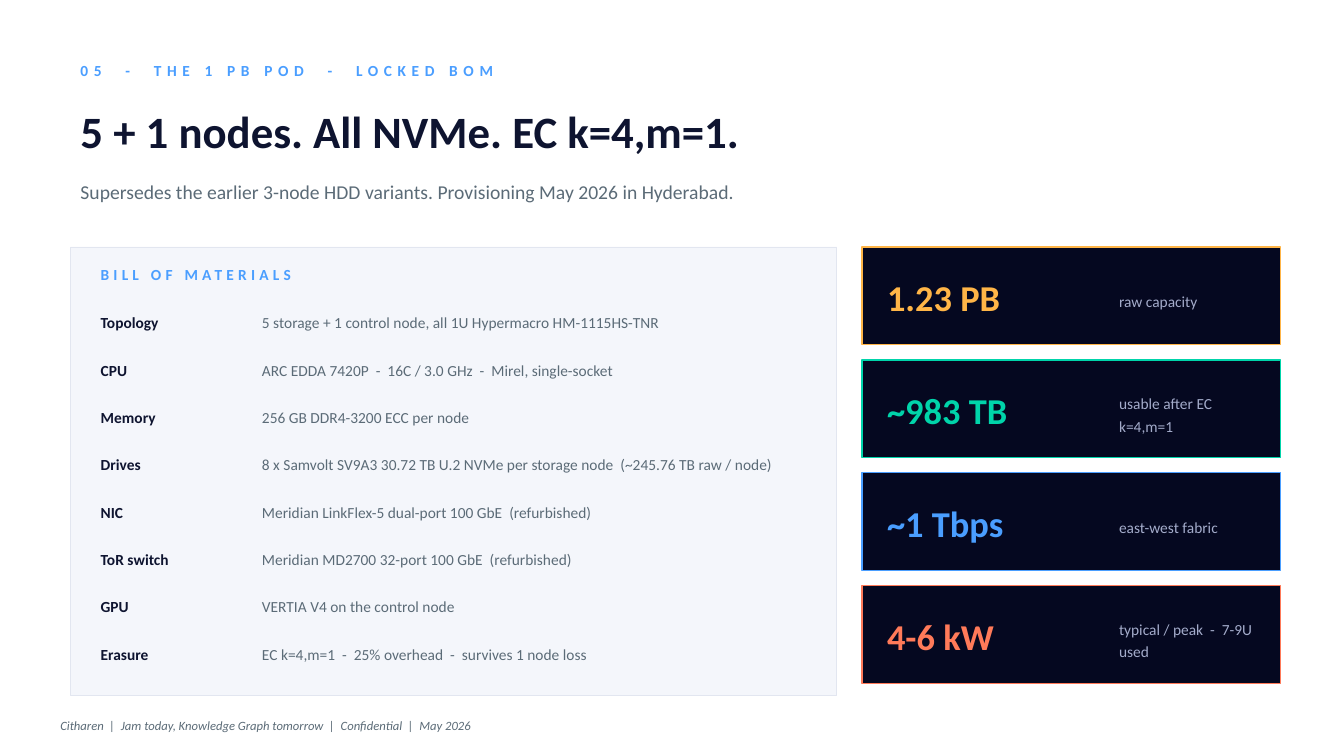
from pptx import Presentation
from pptx.dml.color import RGBColor
from pptx.enum.shapes import MSO_SHAPE
from pptx.enum.text import MSO_ANCHOR
from pptx.util import Emu, Pt

EMU_PER_PX = 9144
NAVY = "0E1430"
SLATE = "5B6B77"
BLUE = "4A9EFF"
AMBER = "FFB547"
GREEN = "00D4AA"
CORAL = "FF7A59"
MIST = "A4ACCB"
MIDNIGHT = "050820"
PANEL = "F4F6FB"
PANEL_EDGE = "E2E6F0"

MATERIALS = [
    ("Topology", "5 storage + 1 control node, all 1U Hypermacro HM-1115HS-TNR"),
    ("CPU", "ARC EDDA 7420P  -  16C / 3.0 GHz  -  Mirel, single-socket"),
    ("Memory", "256 GB DDR4-3200 ECC per node"),
    ("Drives", "8 x Samvolt SV9A3 30.72 TB U.2 NVMe per storage node  (~245.76 TB raw / node)"),
    ("NIC", "Meridian LinkFlex-5 dual-port 100 GbE  (refurbished)"),
    ("ToR switch", "Meridian MD2700 32-port 100 GbE  (refurbished)"),
    ("GPU", "VERTIA V4 on the control node"),
    ("Erasure", "EC k=4,m=1  -  25% overhead  -  survives 1 node loss"),
]
METRICS = [
    ("1.23 PB", "raw capacity", AMBER),
    ("~983 TB", "usable after EC k=4,m=1", GREEN),
    ("~1 Tbps", "east-west fabric", BLUE),
    ("4-6 kW", "typical / peak  -  7-9U used", CORAL),
]


def px(length):
    return Emu(length * EMU_PER_PX)


def color(value):
    return RGBColor.from_string(value)


class Page:
    font = "Calibri"

    def __init__(self, deck):
        self.slide = deck.slides.add_slide(deck.slide_layouts[6])

    def panel(self, left, top, width, height, fill, edge, weight):
        panel = self.slide.shapes.add_shape(
            MSO_SHAPE.RECTANGLE, px(left), px(top), px(width), px(height))
        panel.shadow.inherit = False
        panel.fill.solid()
        panel.fill.fore_color.rgb = color(fill)
        panel.line.color.rgb = color(edge)
        panel.line.width = Pt(weight)

    def text(self, left, top, width, height, words, size, ink,
             bold=False, italic=False, tracking=0, leading=None):
        box = self.slide.shapes.add_textbox(px(left), px(top), px(width), px(height))
        frame = box.text_frame
        frame.word_wrap = True
        frame.vertical_anchor = MSO_ANCHOR.MIDDLE
        para = frame.paragraphs[0]
        if leading:
            para.line_spacing = Pt(leading)
        span = para.add_run()
        span.text = words
        span.font.name = self.font
        span.font.size = Pt(size)
        span.font.bold = bold
        span.font.italic = italic
        span.font.color.rgb = color(ink)
        if tracking:
            span.font._element.set("spc", str(tracking * 100))

    def material(self, top, label, detail):
        self.text(90, top, 155, 40, label, 11, NAVY, bold=True)
        self.text(250, top, 570, 40, detail, 11, SLATE)

    def metric(self, top, figure, caption, accent):
        self.panel(855, top, 415, 97, MIDNIGHT, accent, 1)
        self.text(870, top + 7, 230, 85, figure, 26, accent, bold=True)
        self.text(1100, top + 25, 165, 55, caption, 11, MIST, leading=16)


def main():
    deck = Presentation()
    deck.slide_width = px(1333)
    deck.slide_height = px(750)
    page = Page(deck)

    page.text(70, 55, 800, 30, "05  -  THE 1 PB POD  -  LOCKED BOM", 11, BLUE,
              bold=True, tracking=4)
    page.text(70, 95, 1200, 70, "5 + 1 nodes. All NVMe. EC k=4,m=1.", 32, NAVY, bold=True)
    page.text(70, 170, 1200, 40,
              "Supersedes the earlier 3-node HDD variants. Provisioning May 2026 in Hyderabad.",
              14, SLATE)

    page.panel(70, 245, 760, 445, PANEL, PANEL_EDGE, 0.5)
    page.text(90, 255, 700, 35, "BILL OF MATERIALS", 11, BLUE, bold=True, tracking=3)
    for row, (label, detail) in enumerate(MATERIALS):
        page.material(300 + 47 * row, label, detail)

    for row, (figure, caption, accent) in enumerate(METRICS):
        page.metric(245 + 112 * row, figure, caption, accent)

    page.text(50, 705, 1230, 30,
              "Citharen  |  Jam today, Knowledge Graph tomorrow  |  Confidential  |  May 2026",
              9, SLATE, italic=True)
    deck.save("out.pptx")


if __name__ == "__main__":
    main()
